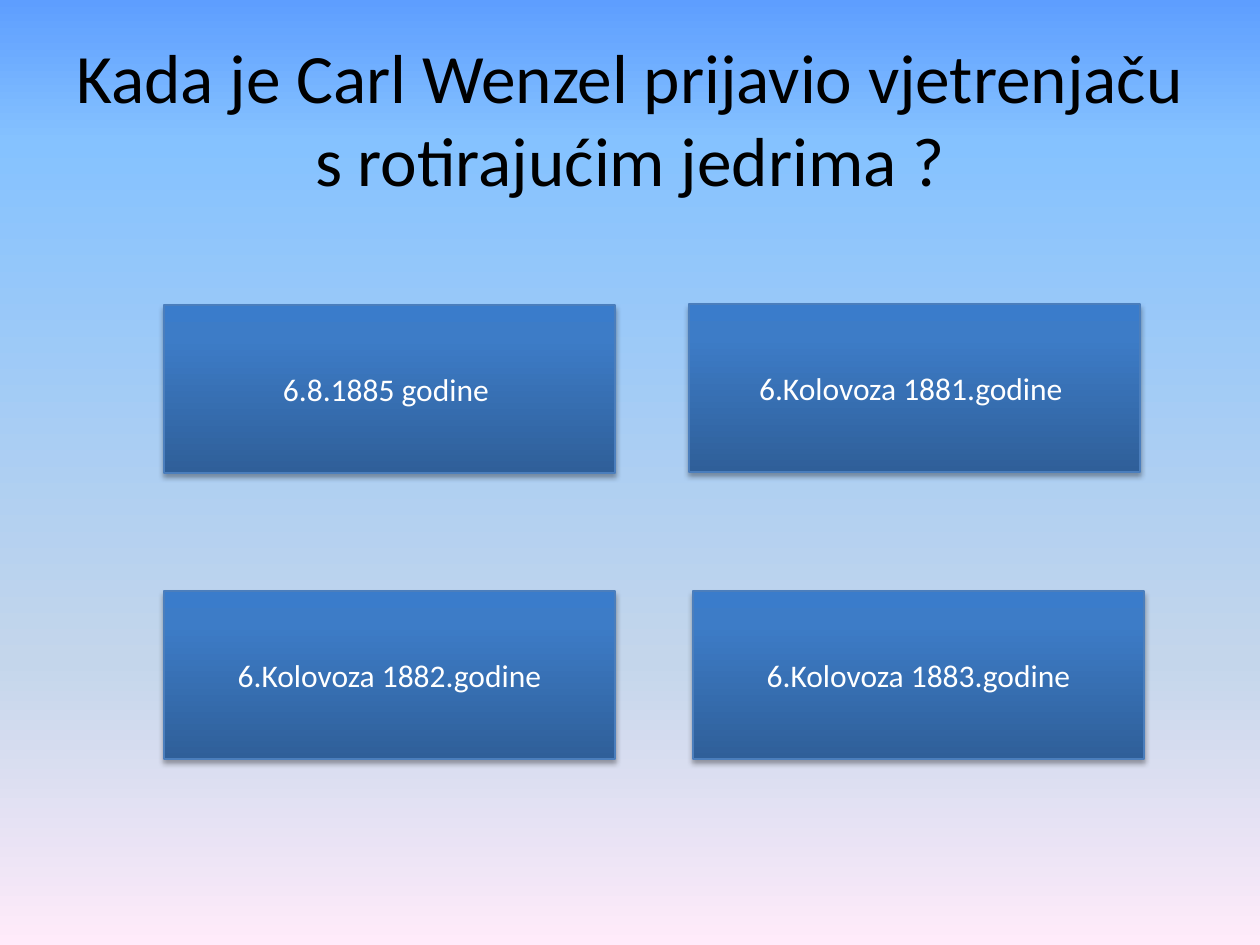
import lxml.etree
import pptx
import pptx.dml.color
import pptx.enum.shapes
import pptx.enum.text
import pptx.oxml.ns
import pptx.util

RGBColor = pptx.dml.color.RGBColor
BLACK = RGBColor(0x00, 0x00, 0x00)
WHITE = RGBColor(0xFF, 0xFF, 0xFF)
BUTTON_EDGE = RGBColor(0x4B, 0x7E, 0xBC)
SKY_STOPS = [
    (0, RGBColor(0x5E, 0x9E, 0xFF)),
    (15, RGBColor(0x85, 0xC2, 0xFF)),
    (70, RGBColor(0xC4, 0xD6, 0xEB)),
    (100, RGBColor(0xFF, 0xEB, 0xFA)),
]
BUTTON_STOPS = [
    (0, RGBColor(0x2F, 0x5F, 0x99)),
    (80, RGBColor(0x3D, 0x7C, 0xC7)),
    (100, RGBColor(0x3A, 0x7C, 0xCB)),
]
QUESTION = "Kada je Carl Wenzel prijavio vjetrenjaču s rotirajućim jedrima ?"
QUESTION_BOX = (63, 38, 1134, 158)
BUTTON_SIZE = (451, 168)
ANSWERS = [
    ("6.Kolovoza 1882.godine", (164, 591)),
    ("6.8.1885 godine ", (164, 305)),
    ("6.Kolovoza 1881.godine ", (689, 304)),
    ("6.Kolovoza 1883.godine", (693, 591)),
]


def px(length):
    """Turn pixels at 126 to the inch into EMU."""
    return pptx.util.Emu(round(length * 914400 / 126))


def add_child(parent, tag, **attributes):
    """Append a DrawingML element to its parent."""
    child = lxml.etree.SubElement(parent, pptx.oxml.ns.qn(tag))
    for key, value in attributes.items():
        child.set(key, str(value))
    return child


def set_gradient(fill, owner, stops, angle):
    """Give a fill a linear gradient with any number of stops."""
    fill.gradient()
    fill.gradient_angle = angle
    stop_list = owner.xpath(".//a:gradFill/a:gsLst")[0]
    for stop in list(stop_list):
        stop_list.remove(stop)
    for percent, color in stops:
        stop = add_child(stop_list, "a:gs", pos=percent * 1000)
        add_child(stop, "a:srgbClr", val=color)


def set_shadow(shape):
    """Cast a soft shadow straight down."""
    shape.shadow.inherit = False
    effects = shape.element.xpath("./p:spPr/a:effectLst")[0]
    shadow = add_child(effects, "a:outerShdw", blurRad=pptx.util.Pt(3.1),
                       dist=pptx.util.Pt(1.8), dir=90 * 60000, rotWithShape=0)
    color = add_child(shadow, "a:srgbClr", val=BLACK)
    add_child(color, "a:alpha", val=35000)


def write_text(shape, text, size, color):
    """Write one centred paragraph in the middle of a shape."""
    frame = shape.text_frame
    frame.word_wrap = True
    frame.vertical_anchor = pptx.enum.text.MSO_ANCHOR.MIDDLE
    paragraph = frame.paragraphs[0]
    paragraph.alignment = pptx.enum.text.PP_ALIGN.CENTER
    run = paragraph.add_run()
    run.text = text
    run.font.name = "Calibri"
    run.font.size = pptx.util.Pt(size)
    run.font.color.rgb = color


def place_question(slide, box):
    """Place the question in the title placeholder."""
    question = slide.shapes.title
    question.left, question.top, question.width, question.height = map(px, box)
    write_text(question, QUESTION, size=39.6, color=BLACK)


def add_answer(slide, box, answer):
    """Add one answer button."""
    button = slide.shapes.add_shape(
        pptx.enum.shapes.MSO_SHAPE.ACTION_BUTTON_CUSTOM, *map(px, box))
    set_gradient(button.fill, button.element, BUTTON_STOPS, angle=90)
    button.line.color.rgb = BUTTON_EDGE
    button.line.width = pptx.util.Pt(0.75)
    set_shadow(button)
    write_text(button, answer, size=18, color=WHITE)


def main():
    """Build the quiz slide and save it."""
    deck = pptx.Presentation()
    deck.slide_width, deck.slide_height = px(1260), px(945)
    slide = deck.slides.add_slide(deck.slide_layouts.get_by_name("Title Only"))
    set_gradient(slide.background.fill, slide.element, SKY_STOPS, angle=270)
    place_question(slide, QUESTION_BOX)
    for answer, corner in ANSWERS:
        add_answer(slide, corner + BUTTON_SIZE, answer)
    deck.save("out.pptx")


if __name__ == "__main__":
    main()
